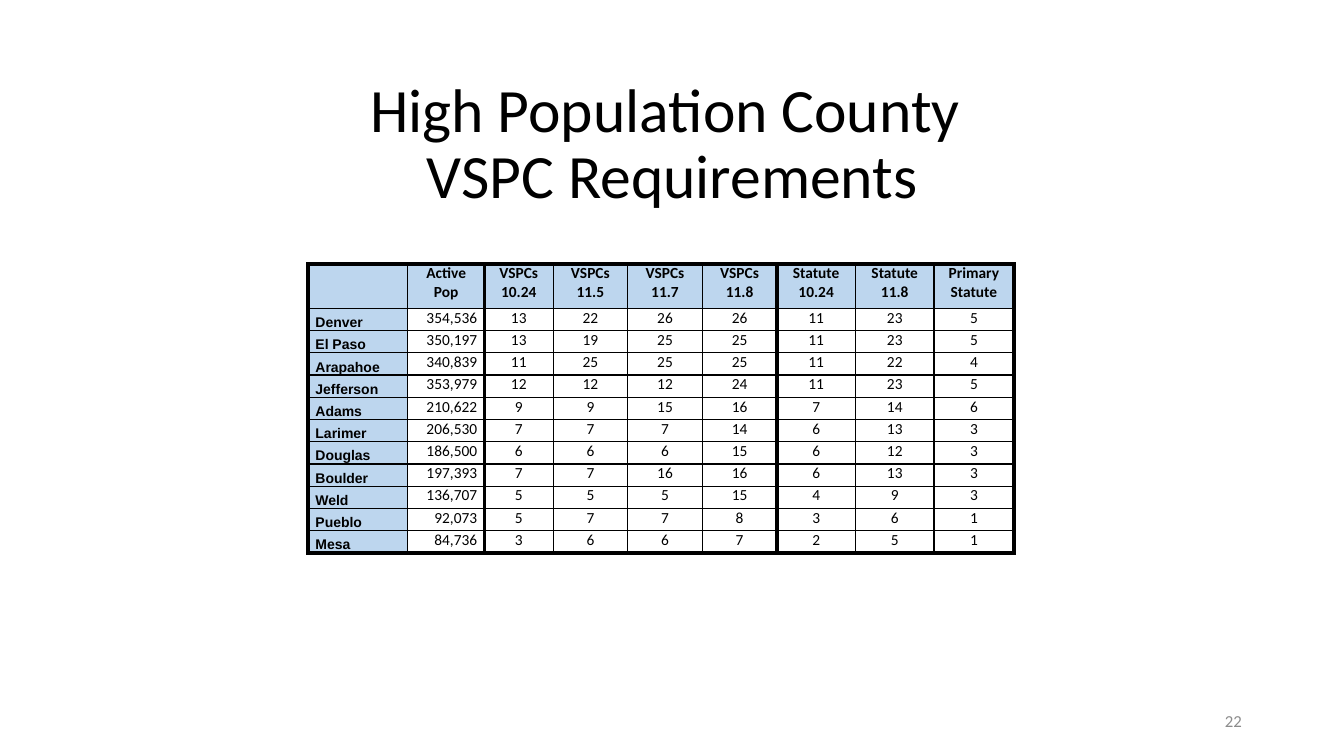
from lxml import etree
from pptx import Presentation
from pptx import util as u
from pptx.dml import color
from pptx.enum import text
from pptx.oxml import ns

BLACK, GREY, PALE_BLUE = "000000", "8C8C8C", "BDD6EE"
LEFT, CENTER, RIGHT = text.PP_ALIGN.LEFT, text.PP_ALIGN.CENTER, text.PP_ALIGN.RIGHT
TOP, MIDDLE, BOTTOM = (text.MSO_ANCHOR.TOP, text.MSO_ANCHOR.MIDDLE,
                       text.MSO_ANCHOR.BOTTOM)

HEADERS = ["", "Active Pop", "VSPCs 10.24", "VSPCs 11.5", "VSPCs 11.7",
           "VSPCs 11.8", "Statute 10.24", "Statute 11.8", "Primary Statute"]
COUNTIES = [
    ["Denver", "354,536", 13, 22, 26, 26, 11, 23, 5],
    ["El Paso", "350,197", 13, 19, 25, 25, 11, 23, 5],
    ["Arapahoe", "340,839", 11, 25, 25, 25, 11, 22, 4],
    ["Jefferson", "353,979", 12, 12, 12, 24, 11, 23, 5],
    ["Adams", "210,622", 9, 9, 15, 16, 7, 14, 6],
    ["Larimer", "206,530", 7, 7, 7, 14, 6, 13, 3],
    ["Douglas", "186,500", 6, 6, 6, 15, 6, 12, 3],
    ["Boulder", "197,393", 7, 7, 16, 16, 6, 13, 3],
    ["Weld", "136,707", 5, 5, 5, 15, 4, 9, 3],
    ["Pueblo", "92,073", 5, 7, 7, 8, 3, 6, 1],
    ["Mesa", "84,736", 3, 6, 6, 7, 2, 5, 1],
]
COLUMN_WIDTHS = [2.51, 1.93, 1.73, 1.88, 1.88, 1.88, 1.98, 1.98, 2.01]
HEADER_HEIGHT = 1.12
HEAVY_COLUMN_EDGES = {0, 2, 6, len(HEADERS)}
HEAVY_ROW_EDGES = {0, len(COUNTIES) + 1}


def rgb(hex_color):
    return color.RGBColor.from_string(hex_color)


def set_attributes(target, values):
    for name, value in values.items():
        setattr(target, name, value)


def write(frame, content, align, hex_color, size, name="Calibri", bold=False):
    paragraph = frame.paragraphs[0]
    paragraph.text = content
    paragraph.alignment = align
    for font in [paragraph.font] + [run.font for run in paragraph.runs]:
        set_attributes(font, {"name": name, "size": u.Pt(size), "bold": bold})
        font.color.rgb = rgb(hex_color)
    return paragraph


def add_text(slide, box, content, align, hex_color, size):
    frame = slide.shapes.add_textbox(*map(u.Cm, box)).text_frame
    set_attributes(frame, {"word_wrap": True, "vertical_anchor": MIDDLE})
    return write(frame, content, align, hex_color, size)


def draw_borders(cell, row, column):
    edges = {
        "a:lnL": column in HEAVY_COLUMN_EDGES,
        "a:lnR": column + 1 in HEAVY_COLUMN_EDGES,
        "a:lnT": row in HEAVY_ROW_EDGES,
        "a:lnB": row + 1 in HEAVY_ROW_EDGES,
    }
    properties = cell._tc.get_or_add_tcPr()
    for tag, heavy in edges.items():
        line = etree.SubElement(properties, ns.qn(tag), w=str(u.Pt(3 if heavy else 1)))
        fill = etree.SubElement(line, ns.qn("a:solidFill"))
        etree.SubElement(fill, ns.qn("a:srgbClr"), val=BLACK)


def add_title(slide, box):
    paragraph = add_text(slide, box, "High Population County \vVSPC Requirements",
                         CENTER, BLACK, 44)
    paragraph.line_spacing = 0.9


def add_county_table(slide, box):
    rows = [HEADERS] + COUNTIES
    table = slide.shapes.add_table(len(rows), len(HEADERS), *map(u.Cm, box)).table
    set_attributes(table, {"first_row": False, "horz_banding": False})
    for column, width in zip(table.columns, COLUMN_WIDTHS):
        column.width = u.Cm(width)
    county_height = (box[3] - HEADER_HEIGHT) / len(COUNTIES)

    for r, values in enumerate(rows):
        table.rows[r].height = u.Cm(county_height if r else HEADER_HEIGHT)
        for c, value in enumerate(values):
            cell = table.cell(r, c)
            is_header, is_county = r == 0, r > 0 and c == 0
            set_attributes(cell, {
                "margin_left": u.Cm(0.18), "margin_right": u.Cm(0.18),
                "margin_top": 0, "margin_bottom": 0,
                "vertical_anchor": BOTTOM if is_county else TOP,
            })
            draw_borders(cell, r, c)

            # Shaded headings, clear figures
            if is_header or is_county:
                cell.fill.solid()
                cell.fill.fore_color.rgb = rgb(PALE_BLUE)
            else:
                cell.fill.background()

            if is_county:
                write(cell.text_frame, value, LEFT, BLACK, 10, "Arial", True)
            else:
                align = RIGHT if c == 1 and not is_header else CENTER
                write(cell.text_frame, str(value), align, BLACK, 11, bold=is_header)


def add_slide_number(slide, box):
    add_text(slide, box, "22", RIGHT, GREY, 12)


def main():
    presentation = Presentation()
    set_attributes(presentation, {"slide_width": u.Cm(33.87),
                                  "slide_height": u.Cm(19.05)})
    slide = presentation.slides.add_slide(presentation.slide_layouts[6])
    add_title(slide, (2.34, 1.83, 29.21, 3.68))
    add_county_table(slide, (7.77, 6.65, 17.78, 7.29))
    add_slide_number(slide, (23.93, 17.65, 7.62, 1.01))
    presentation.save("out.pptx")


if __name__ == "__main__":
    main()
